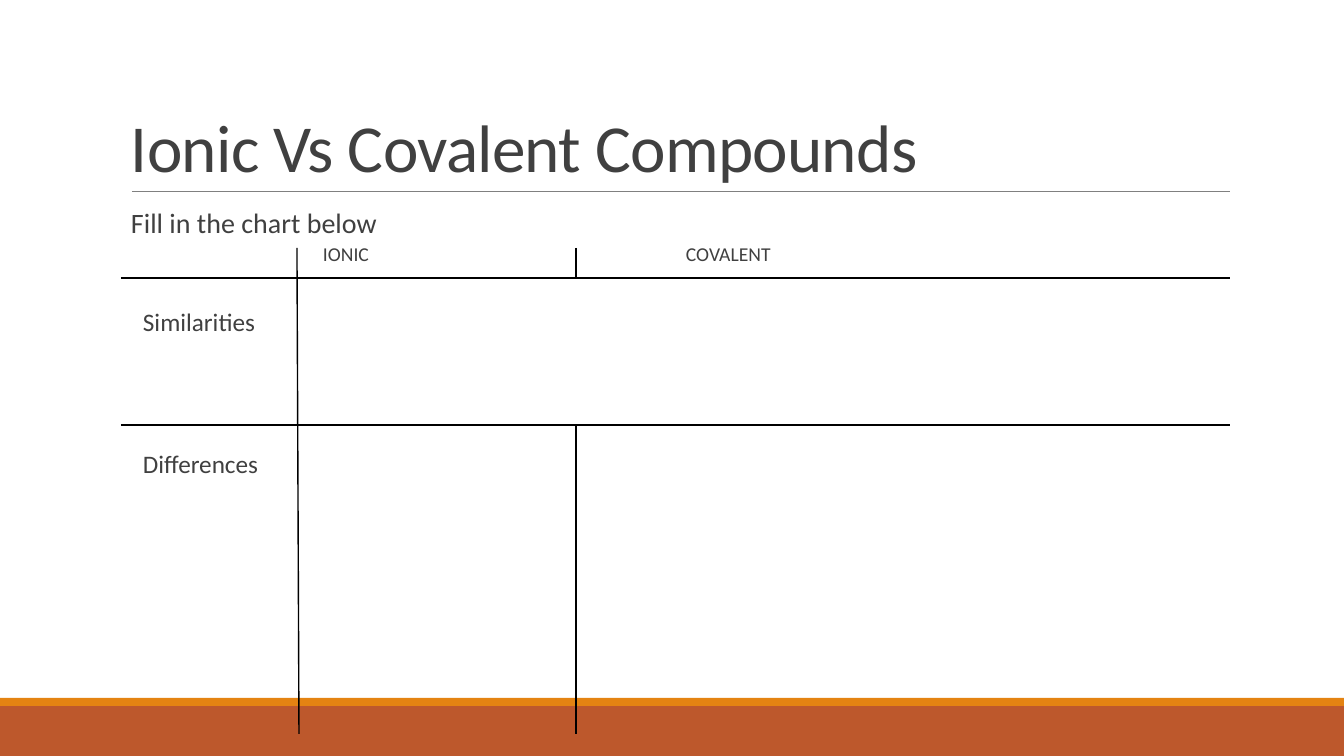
import pptx
import pptx.util
import pptx.dml.color
import pptx.enum.shapes
import pptx.enum.text
import pptx.oxml.ns
import lxml.etree

SLIDE_WIDTH, SLIDE_HEIGHT = 1344, 756
EMU_PER_PX = 914400 / 100.8
INK, BLACK, GRAY = "404040", "000000", "808080"

TITLE = ("Ionic Vs Covalent Compounds", 131, 31, 1089, 155, 48)
LABELS = [
    ("Fill in the chart below", 131, 209, 500, 32, 20),
    ("IONIC", 323, 245, 200, 24, 14),
    ("COVALENT", 686, 245, 300, 24, 14),
    ("Similarities", 143, 310, 150, 30, 18),
    ("Differences", 143, 452, 150, 30, 18),
]
FOOTER_BANDS = [(706, 50, "BD582C"), (698, 8, "E48312")]

LEFT, RIGHT = 121, 1230
HEAD, SIMILARITIES, DIFFERENCES, FOOT = 248, 278, 425, 734
COVALENT = 576
TITLE_RULE = (132, 191, RIGHT, 191)
CHART_RULES = [
    (COVALENT, HEAD, COVALENT, SIMILARITIES),
    (LEFT, DIFFERENCES, RIGHT, DIFFERENCES),
    (LEFT, SIMILARITIES, RIGHT, SIMILARITIES),
    (COVALENT, DIFFERENCES, COVALENT, FOOT),
    (297, HEAD, 299, FOOT),
]


def px(length):
    return round(length * EMU_PER_PX)


def color(value):
    return pptx.dml.color.RGBColor.from_string(value)


def apply(target, values):
    for name, value in values.items():
        setattr(target, name, value)


def add_text(shapes, content, line_spacing, anchor):
    words, *place, size = content
    box = shapes.add_textbox(*map(px, place))
    frame = box.text_frame
    apply(frame, {
        "word_wrap": True, "vertical_anchor": anchor,
        "margin_left": 0, "margin_right": 0, "margin_top": 0, "margin_bottom": 0,
    })
    paragraph = frame.paragraphs[0]
    paragraph.line_spacing = line_spacing
    run = paragraph.add_run()
    run.text = words
    apply(run.font, {"name": "Calibri", "size": pptx.util.Pt(size)})
    run.font.color.rgb = color(INK)
    return run


def add_rule(shapes, ends, ink, width):
    rule = shapes.add_connector(pptx.enum.shapes.MSO_CONNECTOR.STRAIGHT, *map(px, ends))
    rule.line.color.rgb = color(ink)
    rule.line.width = pptx.util.Pt(width)
    lxml.etree.SubElement(rule._element.spPr, pptx.oxml.ns.qn("a:effectLst"))


def main():
    deck = pptx.Presentation()
    apply(deck, {"slide_width": px(SLIDE_WIDTH), "slide_height": px(SLIDE_HEIGHT)})
    shapes = deck.slides.add_slide(deck.slide_layouts[6]).shapes

    for top, height, fill in FOOTER_BANDS:
        band = shapes.add_shape(pptx.enum.shapes.MSO_SHAPE.RECTANGLE,
                                0, px(top), px(SLIDE_WIDTH), px(height))
        band.shadow.inherit = False
        band.fill.solid()
        band.fill.fore_color.rgb = color(fill)
        band.line.fill.background()

    add_rule(shapes, TITLE_RULE, GRAY, 0.5)
    title = add_text(shapes, TITLE, 0.85, pptx.enum.text.MSO_ANCHOR.BOTTOM)
    title.font._element.set("spc", "-50")
    for label in LABELS:
        add_text(shapes, label, 0.9, pptx.enum.text.MSO_ANCHOR.TOP)
    for ends in CHART_RULES:
        add_rule(shapes, ends, BLACK, 1)

    deck.save("out.pptx")


if __name__ == "__main__":
    main()
